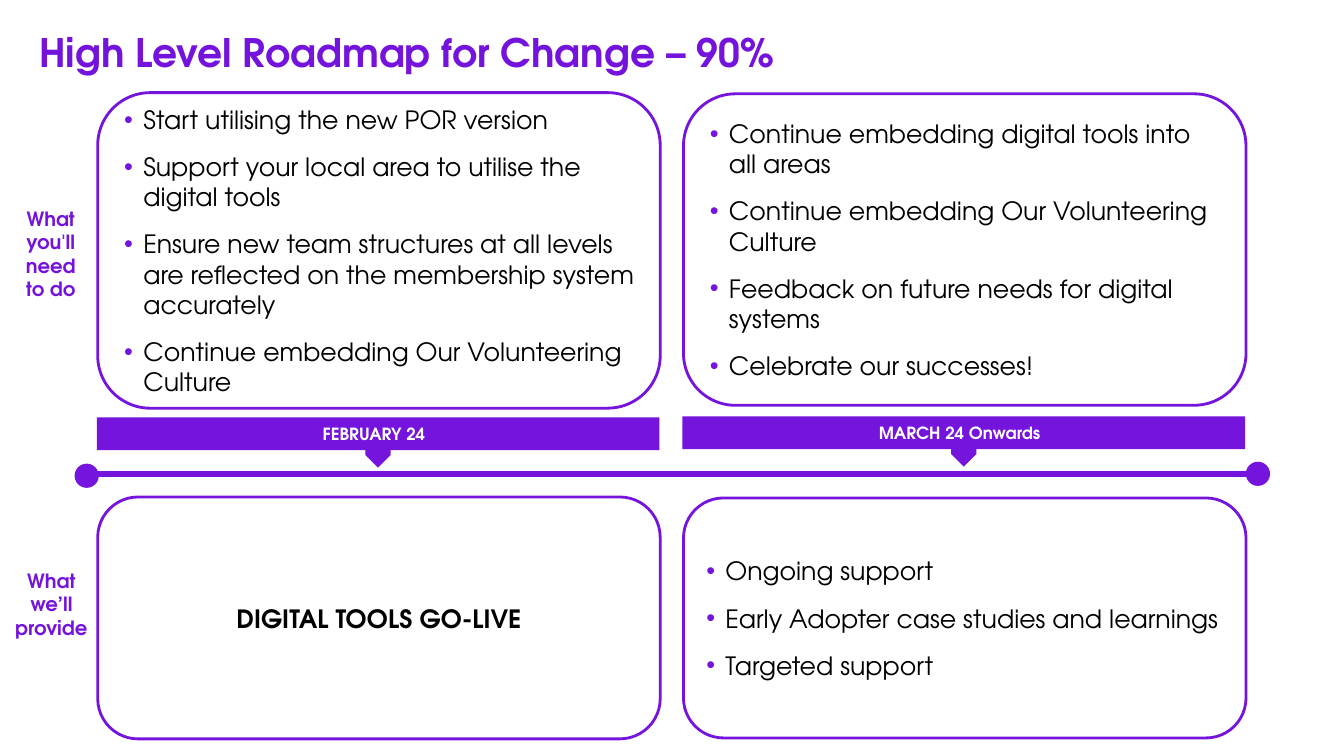
from dataclasses import dataclass

from lxml.etree import SubElement
from pptx import Presentation
from pptx.dml.color import RGBColor
from pptx.enum.shapes import MSO_CONNECTOR, MSO_SHAPE
from pptx.enum.text import MSO_ANCHOR, MSO_AUTO_SIZE, PP_ALIGN
from pptx.oxml.ns import qn
from pptx.util import Pt


@dataclass(frozen=True)
class Theme:
    font: str = "TeX Gyre Adventor"
    purple: str = "7414DC"
    heading: str = "7413DC"
    black: str = "000000"
    white: str = "FFFFFF"
    title_size: int = 28
    body_size: int = 18
    label_size: int = 14
    month_size: int = 12


class RoadmapSlide:
    """Draws the roadmap elements on one slide in a shared theme."""

    def __init__(self, s, theme):
        self.s = s
        self.theme = theme

    def place(self, sp, x, y, w, h):
        sp.left, sp.top, sp.width, sp.height = Pt(x), Pt(y), Pt(w), Pt(h)

    def frame(self, sp, anchor, left=0, top=0, right=0, bottom=0):
        tf = sp.text_frame
        tf.word_wrap = True
        tf.auto_size = MSO_AUTO_SIZE.NONE
        tf.vertical_anchor = anchor
        tf.margin_left, tf.margin_right = Pt(left), Pt(right)
        tf.margin_top, tf.margin_bottom = Pt(top), Pt(bottom)
        return tf

    def add_text(self, p, text, size, color, bold=True, align=PP_ALIGN.CENTER):
        p.alignment = align
        r = p.add_run()
        r.text = text
        r.font.name = self.theme.font
        r.font.size = Pt(size)
        r.font.bold = bold
        r.font.color.rgb = RGBColor.from_string(color)

    def bullet(self, p, bulleted):
        pPr = p._p.get_or_add_pPr()
        pPr.set("marL", str(Pt(14.4) if bulleted else 0))
        pPr.set("indent", str(Pt(-13.7) if bulleted else 0))
        if bulleted:
            clr = SubElement(pPr, qn("a:buClr"))
            SubElement(clr, qn("a:srgbClr")).set("val", self.theme.purple)
            SubElement(pPr, qn("a:buFont")).set("typeface", "Arial")
            SubElement(pPr, qn("a:buChar")).set("char", "•")
        else:
            SubElement(pPr, qn("a:buNone"))

    def shape(self, kind, x, y, w, h, filled=True):
        sp = self.s.shapes.add_shape(kind, Pt(x), Pt(y), Pt(w), Pt(h))
        sp.shadow.inherit = False
        color = RGBColor.from_string(self.theme.purple)
        if filled:
            sp.fill.solid()
            sp.fill.fore_color.rgb = color
            sp.line.fill.background()
        else:
            sp.fill.background()
            sp.line.color.rgb = color
            sp.line.width = Pt(2)
        return sp

    def title(self, text, x, y, w, h):
        sp = self.s.shapes.title
        self.place(sp, x, y, w, h)
        p = self.frame(sp, MSO_ANCHOR.TOP, top=3.6).paragraphs[0]
        p.space_before = Pt(0)
        self.add_text(p, text, self.theme.title_size, self.theme.heading,
                      align=PP_ALIGN.LEFT)

    def panel(self, idx, lines, x, y, w, h, bulleted=True):
        self.shape(MSO_SHAPE.ROUNDED_RECTANGLE, x, y, w, h, filled=False)
        sp = self.s.placeholders[idx]
        self.place(sp, x, y, w, h)
        corner = h * 0.0488
        side, edge = corner + 7.2, corner + 3.6
        tf = self.frame(sp, MSO_ANCHOR.MIDDLE, side, edge, side, edge)
        for i, line in enumerate(lines):
            p = tf.add_paragraph() if i else tf.paragraphs[0]
            self.bullet(p, bulleted)
            p.space_before = Pt(6 if i else 0)
            p.space_after = Pt(6)
            self.add_text(p, line, self.theme.body_size, self.theme.black,
                          not bulleted,
                          PP_ALIGN.LEFT if bulleted else PP_ALIGN.CENTER)

    def month(self, text, x, y, w, h):
        sp = self.shape(MSO_SHAPE.DOWN_ARROW_CALLOUT, x, y, w, h)
        for i, value in enumerate((0.5, 0.25, 0.25, 0.65)):
            sp.adjustments[i] = value
        tf = self.frame(sp, MSO_ANCHOR.MIDDLE, right=5.8)
        self.add_text(tf.paragraphs[0], text, self.theme.month_size,
                      self.theme.white)

    def label(self, text, x, y, w, h):
        sp = self.s.shapes.add_textbox(Pt(x), Pt(y), Pt(w), Pt(h))
        tf = self.frame(sp, MSO_ANCHOR.TOP, top=3.6)
        self.add_text(tf.paragraphs[0], text, self.theme.label_size,
                      self.theme.heading)

    def timeline(self, x1, x2, y):
        c = self.s.shapes.add_connector(
            MSO_CONNECTOR.STRAIGHT, Pt(x1), Pt(y), Pt(x2), Pt(y))
        c.line.color.rgb = RGBColor.from_string(self.theme.purple)
        c.line.width = Pt(4.5)
        SubElement(c._element.spPr, qn("a:effectLst"))

    def dot(self, x, y, d):
        self.shape(MSO_SHAPE.FLOWCHART_CONNECTOR, x, y, d, d)


def main():
    prs = Presentation()
    prs.slide_width, prs.slide_height = Pt(960), Pt(540)
    comparison = prs.slide_layouts[4]
    slide = RoadmapSlide(prs.slides.add_slide(comparison), Theme())
    left, right, width = 69.8, 488.2, 401.8

    slide.title("High Level Roadmap for Change – 90%", 28, 16.6, 696, 41)
    slide.panel(1, [
        "Start utilising the new POR version",
        "Support your local area to utilise the digital tools",
        "Ensure new team structures at all levels are reflected on the "
        "membership system accurately",
        "Continue embedding Our Volunteering Culture",
    ], left, 66.2, width, 225.4)
    slide.panel(2, [
        "Continue embedding digital tools into all areas",
        "Continue embedding Our Volunteering Culture",
        "Feedback on future needs for digital systems",
        "Celebrate our successes!",
    ], right, 67, width, 222.5)
    slide.panel(3, ["DIGITAL TOOLS GO-LIVE"], left, 355, width, 172.8,
                bulleted=False)
    slide.panel(4, [
        "Ongoing support",
        "Early Adopter case studies and learnings",
        "Targeted support",
    ], right, 355.7, width, 171.4)

    slide.month("FEBRUARY 24", left - 0.7, 298.1, width, 36)
    slide.month("MARCH 24 Onwards", right - 0.7, 297.4, width, 36)
    slide.timeline(56.9, 889.9, 338.4)
    slide.dot(53.3, 331.2, 17.3)
    slide.dot(889.9, 329.8, 17.3)
    slide.label("What you'll need to do", 13.6, 144, 45.4, 75)
    slide.label("What we’ll provide", 9.3, 402.5, 54.8, 58.3)

    prs.save("out.pptx")


if __name__ == "__main__":
    main()
